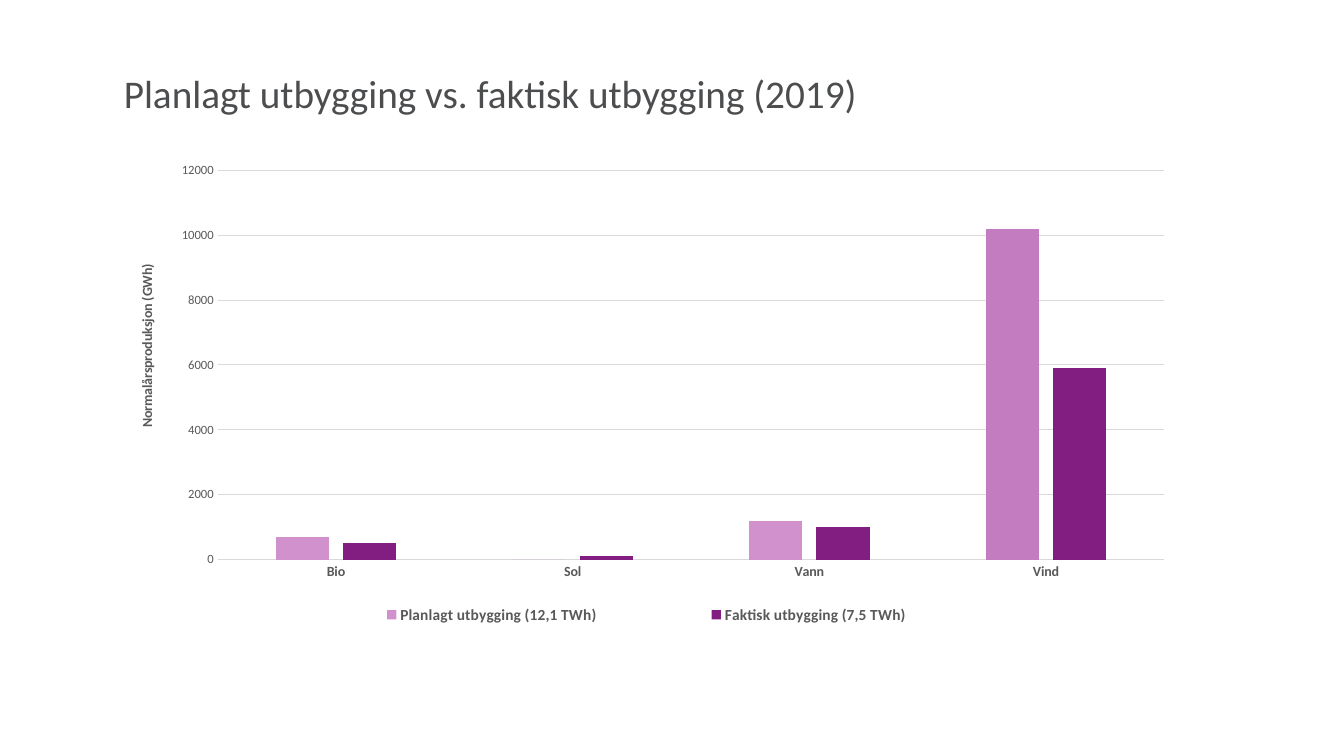
from lxml import etree
from pptx import Presentation
from pptx.chart.data import CategoryChartData
from pptx.dml.color import RGBColor
from pptx.enum.chart import XL_CHART_TYPE, XL_LEGEND_POSITION, XL_TICK_MARK
from pptx.enum.text import MSO_ANCHOR
from pptx.oxml import parse_xml
from pptx.oxml.ns import nsdecls
from pptx.util import Inches, Pt

CLUSTERED = XL_CHART_TYPE.COLUMN_CLUSTERED
BOTTOM = XL_LEGEND_POSITION.BOTTOM
NO_TICK = XL_TICK_MARK.NONE
TOP = MSO_ANCHOR.TOP

# Content
HEADING = "Planlagt utbygging vs. faktisk utbygging (2019)"
UNIT = "Normalårsproduksjon (GWh)"
SOURCES = ["Bio", "Sol", "Vann", "Vind"]
OUTPUT = {
    "Planlagt utbygging (12,1 TWh)": [700, 0, 1200, 10200],
    "Faktisk utbygging (7,5 TWh)": [500, 100, 1000, 5900],
}

THEME = {
    "font": "Calibri",
    "heading": "4C4D4F", "label": "595959", "rule": "D9D9D9", "text": "000000",
    "bars": ["D091CD", "821E82"], "planned_wind": "C47CC1",
    "sizes": {"heading": 28, "base": 10, "category": 10, "value": 9, "unit": 10, "legend": 11},
}

# Slide areas in inches, chart parts as shares of the chart
SLIDE = (13.33, 7.5)
LEFT = 1.13
HEADING_AREA = (LEFT, 0.64, 11.27, 0.9)
CHART_AREA = (LEFT, 1.54, 10.61, 4.8)
PLOT_SHARE = (0.097, 0.031, 0.885, 0.805)
LEGEND_SHARE = (0.153, 0.91, 0.69, 0.08)
UNIT_SHARE = (0.02, 0.22)


def style(font, role, color, bold=False):
    look = {"name": THEME["font"], "size": Pt(THEME["sizes"][role]), "bold": bold}
    for attribute, value in look.items():
        setattr(font, attribute, value)
    font.color.rgb = RGBColor.from_string(THEME[color])


def fill(part, color):
    part.format.fill.solid()
    part.format.fill.fore_color.rgb = RGBColor.from_string(color)


def rule(line):
    line.color.rgb = RGBColor.from_string(THEME["rule"])
    line.width = Pt(0.75)


def place(element, shares, before, target=None):
    """Give a chart part a fixed layout, ahead of the named sibling tags."""
    layout = parse_xml(f"<c:layout {nsdecls('c')}><c:manualLayout/></c:layout>")
    settings = [("layoutTarget", target)] if target else []
    settings += [("xMode", "edge"), ("yMode", "edge")]
    settings += zip("xywh", shares)
    for tag, value in settings:
        etree.SubElement(layout[0], layout.tag.replace("layout", tag)).set("val", str(value))
    for old in element.xpath("./c:layout"):
        element.remove(old)
    element.xpath(before)[0].addprevious(layout)


prs = Presentation()
prs.slide_width, prs.slide_height = map(Inches, SLIDE)
slide = prs.slides.add_slide(prs.slide_layouts[6])

# Heading
heading = slide.shapes.add_textbox(*map(Inches, HEADING_AREA)).text_frame
heading.word_wrap = True
heading.vertical_anchor = TOP
heading.text = HEADING
style(heading.paragraphs[0].runs[0].font, "heading", "heading")

# Chart
data = CategoryChartData()
data.categories = SOURCES
for name, values in OUTPUT.items():
    data.add_series(name, values)
chart = slide.shapes.add_chart(CLUSTERED, *map(Inches, CHART_AREA), data).chart
chart.has_title = False
style(chart.font, "base", "text")
place(chart._chartSpace.chart.plotArea, PLOT_SHARE, "./c:barChart", "inner")

# Columns
columns = chart.plots[0]
for attribute, value in {"gap_width": 219, "overlap": -27, "vary_by_categories": False}.items():
    setattr(columns, attribute, value)
for series, color in zip(columns.series, THEME["bars"]):
    fill(series, color)
fill(columns.series[0].points[SOURCES.index("Vind")], THEME["planned_wind"])

# Axes
source_axis, output_axis = chart.category_axis, chart.value_axis
for axis, role, bold in ((source_axis, "category", True), (output_axis, "value", False)):
    axis.major_tick_mark = axis.minor_tick_mark = NO_TICK
    style(axis.tick_labels.font, role, "label", bold)
rule(source_axis.format.line)
output_axis.format.line.fill.background()
output_axis.has_major_gridlines = True
rule(output_axis.major_gridlines.format.line)
for attribute, value in {"minimum_scale": 0, "maximum_scale": 12000, "major_unit": 2000}.items():
    setattr(output_axis, attribute, value)

unit = output_axis.axis_title
unit.text_frame.text = UNIT
style(unit.text_frame.paragraphs[0].runs[0].font, "unit", "label", True)
unit.text_frame._txBody.bodyPr.set("rot", "-5400000")
unit.text_frame._txBody.bodyPr.set("vert", "horz")
place(unit._element, UNIT_SHARE, "./c:overlay")

# Legend
chart.has_legend = True
legend = chart.legend
legend.position = BOTTOM
legend.include_in_layout = False
style(legend.font, "legend", "label", True)
place(legend._element, LEGEND_SHARE, "./c:overlay")

prs.save("out.pptx")
